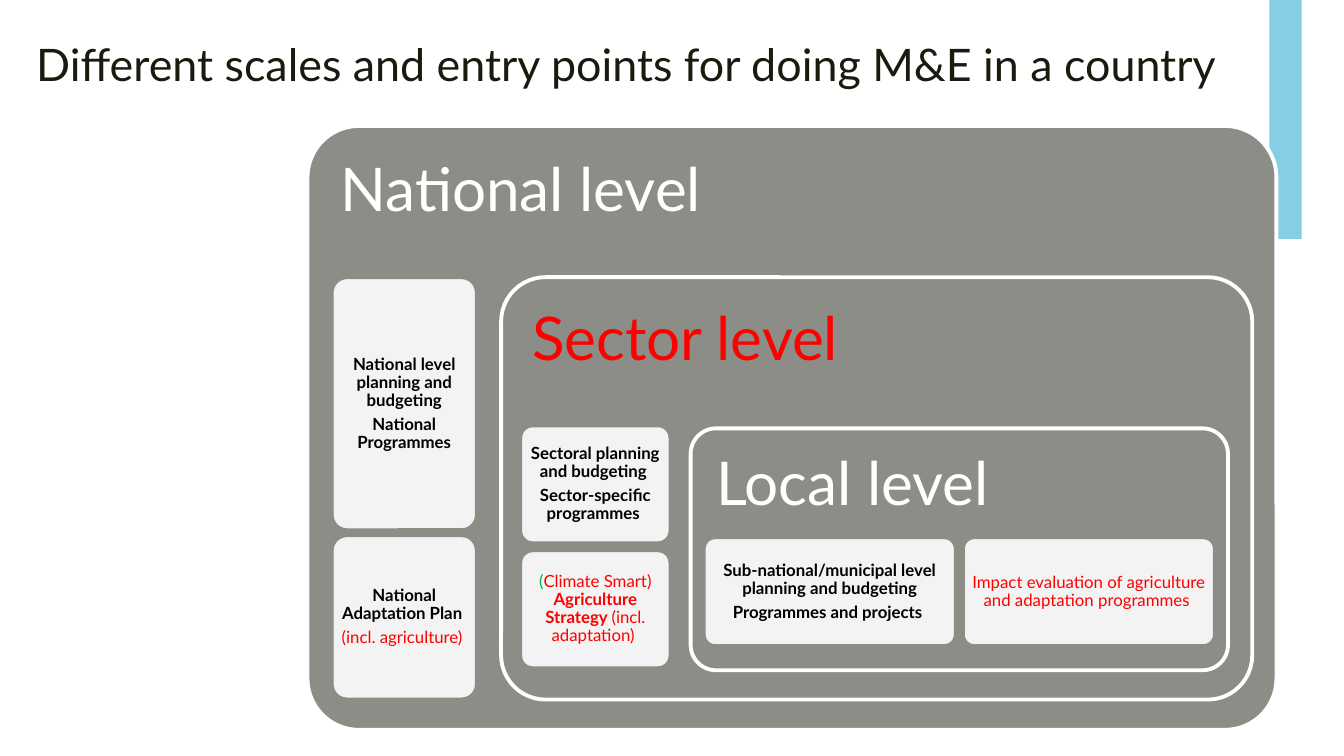
from pptx import Presentation
from pptx.dml.color import RGBColor
from pptx.enum.shapes import MSO_SHAPE as SHAPE
from pptx.enum.text import MSO_ANCHOR as ANCHOR, PP_ALIGN as ALIGN
from pptx.oxml.ns import qn
from pptx.util import Emu, Pt
from lxml import etree

FONT = "Lato"
WHITE, BLACK, RED, GREEN = "FFFFFF", "000000", "FF0000", "00B050"
GREY, BLUE, INK = "8C8D86", "86CEE3", "191B0E"


def px(n):
    """100 px to the inch."""
    return Emu(n * 9144)


def rgb(value):
    return RGBColor.from_string(value)


def style(font, color, bold):
    font.color.rgb = rgb(color)
    font.bold = bold


def write(tf, paras, size, align, inset):
    """Each paragraph is a list of (text, colour, bold) runs."""
    tf.word_wrap = True
    tf.margin_left = tf.margin_right = tf.margin_top = tf.margin_bottom = px(inset)
    for i, runs in enumerate(paras):
        p = tf.add_paragraph() if i else tf.paragraphs[0]
        p.alignment = align
        p.line_spacing = 0.9
        p.space_after = Pt(round(size * 0.35))
        p.font.size, p.font.name = Pt(size), FONT
        for text, color, bold in runs:
            r = p.add_run()
            r.text = text
            style(p.font if len(runs) == 1 else r.font, color, bold)


def add_panel(s, box, kind, fill, line=None, adj=None):
    sp = s.shapes.add_shape(kind, *map(px, box))
    sp.shadow.inherit = False
    sp.fill.solid()
    sp.fill.fore_color.rgb = rgb(fill)
    if line:
        sp.line.color.rgb = rgb(line)
        sp.line.width = Pt(2.75)
    else:
        sp.line.fill.background()
    if adj:
        sp.adjustments[0] = adj
    return sp


def add_level(s, box, name, color, adj=0.105):
    sp = add_panel(s, box, SHAPE.ROUNDED_RECTANGLE, GREY, WHITE, adj)
    sp.text_frame.vertical_anchor = ANCHOR.TOP
    write(sp.text_frame, [[(name, color, False)]], 43, ALIGN.LEFT, 18)


def add_card(s, box, paras):
    sp = add_panel(s, box, SHAPE.ROUNDED_RECTANGLE, WHITE, GREY, 0.105)
    fill = sp.fill._xPr.find(qn("a:solidFill"))
    etree.SubElement(fill[0], qn("a:alpha")).set("val", "90000")
    sp.text_frame.vertical_anchor = ANCHOR.MIDDLE
    write(sp.text_frame, paras, 12, ALIGN.CENTER, 5)


def add_title(s, box, text):
    tf = s.shapes.add_textbox(*map(px, box)).text_frame
    tf.word_wrap = True
    p = tf.paragraphs[0]
    p.text = text
    p.alignment = ALIGN.CENTER
    p.font.size, p.font.name = Pt(32), FONT
    style(p.font, INK, False)


def main():
    prs = Presentation()
    prs.slide_width, prs.slide_height = px(1333), px(750)
    s = prs.slides.add_slide(prs.slide_layouts[6])

    # Side band
    add_panel(s, (1259, 0, 32, 237), SHAPE.RECTANGLE, BLUE)

    # National level
    add_level(s, (305, 125, 961, 599), "National level", WHITE, 0.085)
    add_card(s, (329, 275, 144, 251), [
        [("National level planning and budgeting", BLACK, True)],
        [("National Programmes", BLACK, True)]])
    add_card(s, (329, 531, 144, 163), [
        [("National Adaptation Plan ", BLACK, True)],
        [("(incl. agriculture) ", RED, False)]])

    # Sector level
    add_level(s, (497, 275, 745, 419), "Sector level", RED)
    sector_cards = [
        [[("Sectoral planning and budgeting ", BLACK, True)],
         [("Sector-specific programmes ", BLACK, True)]],
        [[("(", GREEN, False), ("Climate Smart) ", RED, False),
          ("Agriculture Strategy ", RED, True), ("(incl. adaptation) ", RED, False)]]]
    for i, paras in enumerate(sector_cards):
        add_card(s, (516, 422 + i * 124, 149, 117), paras)

    # Local level
    add_level(s, (685, 425, 533, 240), "Local level", WHITE)
    local_cards = [
        [[("Sub-national/municipal level planning and budgeting", BLACK, True)],
         [("Programmes and projects ", BLACK, True)]],
        [[("Impact evaluation of agriculture and adaptation programmes ", RED, False)]]]
    for i, paras in enumerate(local_cards):
        add_card(s, (698 + i * 257, 533, 250, 108), paras)

    # Title
    add_title(s, (16, 32, 1221, 64),
              "Different scales and entry points for doing M&E in a country ")

    prs.save("out.pptx")


if __name__ == "__main__":
    main()
